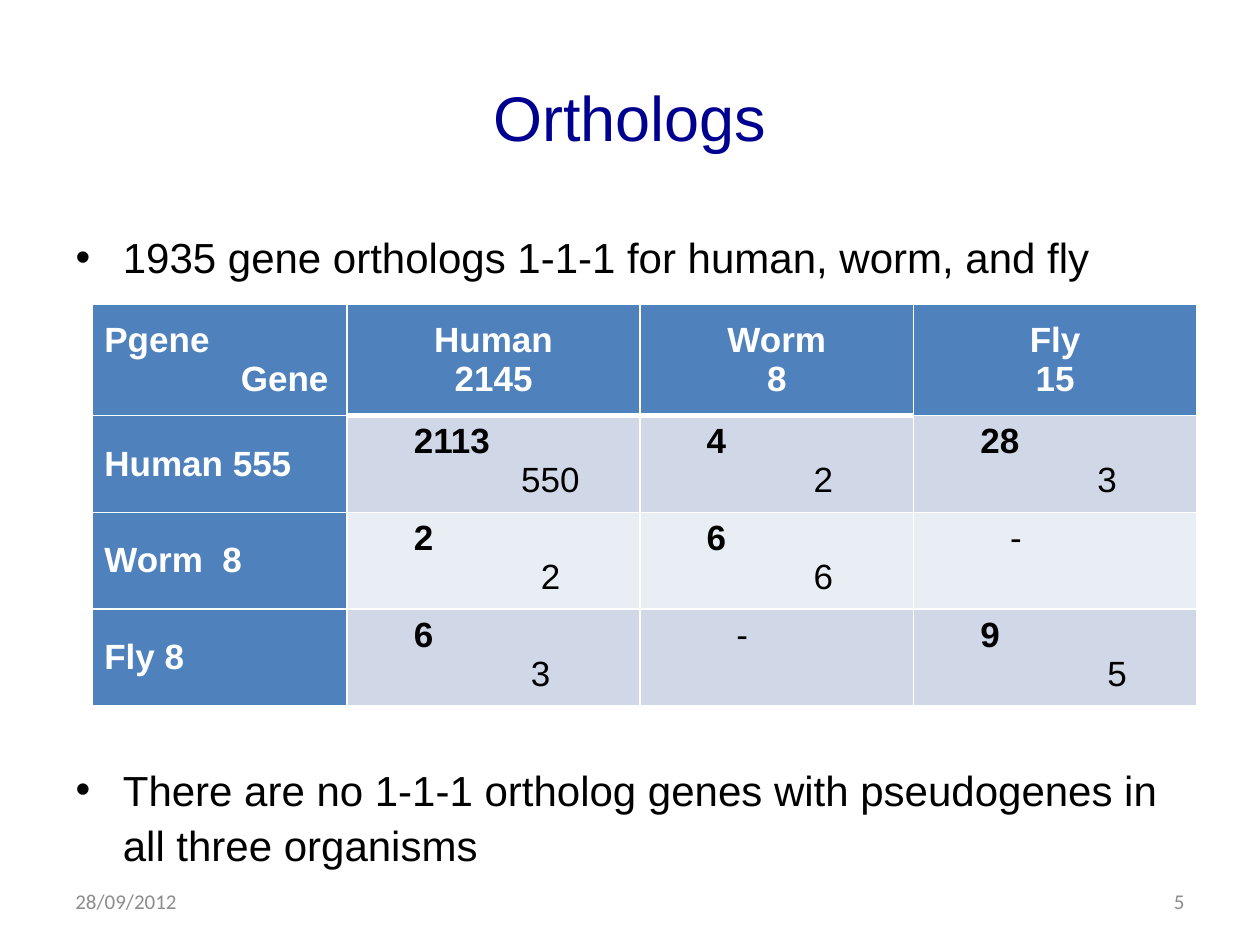
import dataclasses

import pptx
import pptx.dml.color
import pptx.enum.text
import pptx.oxml.xmlchemy
import pptx.util
import lxml.etree

Cm = pptx.util.Cm
Pt = pptx.util.Pt
ALIGN = pptx.enum.text.PP_ALIGN
ANCHOR = pptx.enum.text.MSO_ANCHOR
DRAWING = "{http://schemas.openxmlformats.org/drawingml/2006/main}"


@dataclasses.dataclass(frozen=True)
class Theme:
    font: str = "Arial"
    footer_font: str = "Calibri"
    title: str = "000090"
    ink: str = "000000"
    white: str = "FFFFFF"
    grey: str = "8C8C8C"
    header: str = "4F81BD"
    bands: tuple = ("D0D8E8", "E9EDF4")
    title_size: int = 36
    body_size: int = 24
    table_size: int = 20
    footer_size: int = 12


THEME = Theme()

COLUMN_WIDTHS = (5.15, 5.9, 5.52, 5.7)
HEADER_HEIGHT, ROW_HEIGHT = 2.25, 1.83
COUNT_INDENT, DASH_INDENT, GENE_INDENT = 1.09, 1.69, 2.75
SPECIES = (("Human", "2145"), ("Worm", "8"), ("Fly", "15"))

# Each count: pseudogenes, genes, indent of the gene figure in cm; None for no orthologs
ORTHOLOGS = (
    ("Human 555", (("2113", "550", 3.25), ("4", "2", 3.25), ("28", "3", 3.45))),
    ("Worm  8", (("2", "2", 3.65), ("6", "6", 3.25), None)),
    ("Fly 8", (("6", "3", 3.45), None, ("9", "5", 3.65))),
)


def rgb(color):
    return pptx.dml.color.RGBColor.from_string(color)


def place(item, box):
    item.left, item.top, item.width, item.height = (Cm(length) for length in box)


def add_run(paragraph, text, size, color, bold=False, font=THEME.font):
    run = paragraph.add_run()
    run.text = text
    run.font.name = font
    run.font.size = Pt(size)
    run.font.bold = bold
    run.font.color.rgb = rgb(color)


def next_paragraph(frame, first):
    return frame.paragraphs[0] if first else frame.add_paragraph()


def write_title(slide, box, text):
    title = slide.shapes.title
    place(title, box)
    frame = title.text_frame
    frame.vertical_anchor = ANCHOR.MIDDLE
    frame.paragraphs[0].alignment = ALIGN.CENTER
    add_run(frame.paragraphs[0], text, THEME.title_size, THEME.title)


def write_findings(slide, box, findings):
    """Fill the body list; each finding is its text and the points above it."""
    body = slide.placeholders[1]
    place(body, box)
    frame = body.text_frame
    frame.auto_size = pptx.enum.text.MSO_AUTO_SIZE.NONE
    for index, (text, gap) in enumerate(findings):
        paragraph = next_paragraph(frame, index == 0)
        paragraph.space_before = Pt(gap)
        paragraph.line_spacing = 1.09
        add_run(paragraph, text, THEME.body_size, THEME.ink)


def write_footer(slide, box, text, alignment):
    footer = slide.shapes.add_textbox(*(Cm(length) for length in box))
    frame = footer.text_frame
    frame.word_wrap = True
    frame.vertical_anchor = ANCHOR.MIDDLE
    frame.paragraphs[0].alignment = alignment
    add_run(frame.paragraphs[0], text, THEME.footer_size, THEME.grey,
            font=THEME.footer_font)


def style_cell(cell, fill, top=1, bottom=1):
    """Draw white borders, widths in points, then fill the cell."""
    properties = cell._tc.get_or_add_tcPr()
    for side, width in (("L", 1), ("R", 1), ("T", top), ("B", bottom)):
        line = lxml.etree.SubElement(properties, f"{DRAWING}ln{side}", w=str(Pt(width)))
        solid = lxml.etree.SubElement(line, f"{DRAWING}solidFill")
        lxml.etree.SubElement(solid, f"{DRAWING}srgbClr", val=THEME.white)
    cell.fill.solid()
    cell.fill.fore_color.rgb = rgb(fill)


def write_cell(cell, lines, color, alignment=ALIGN.LEFT, anchor=ANCHOR.MIDDLE):
    """Write lines of text, bold flag and left indent in cm."""
    cell.vertical_anchor = anchor
    for index, (text, bold, indent) in enumerate(lines):
        paragraph = next_paragraph(cell.text_frame, index == 0)
        paragraph.alignment = alignment
        if indent:
            paragraph._p.get_or_add_pPr().set("marL", str(Cm(indent)))
        add_run(paragraph, text, THEME.table_size, color, bold)


def count_lines(count):
    if count is None:
        return [("-", False, DASH_INDENT)]
    pseudogenes, genes, gene_indent = count
    return [(pseudogenes, True, COUNT_INDENT), (genes, False, gene_indent)]


def add_ortholog_table(slide, left, top):
    height = HEADER_HEIGHT + ROW_HEIGHT * len(ORTHOLOGS)
    table = slide.shapes.add_table(
        len(ORTHOLOGS) + 1, len(COLUMN_WIDTHS),
        Cm(left), Cm(top), Cm(sum(COLUMN_WIDTHS)), Cm(height)).table
    for column, width in zip(table.columns, COLUMN_WIDTHS):
        column.width = Cm(width)
    for index, row in enumerate(table.rows):
        row.height = Cm(ROW_HEIGHT if index else HEADER_HEIGHT)

    # The thick rule runs under the Human and Worm headings only
    rule_widths = (1, 3, 3, 1)
    for column, rule in enumerate(rule_widths):
        style_cell(table.cell(0, column), THEME.header, bottom=rule)
    write_cell(table.cell(0, 0), [("Pgene", True, 0), ("Gene", True, GENE_INDENT)],
               THEME.white)
    for column, heading in enumerate(SPECIES, 1):
        write_cell(table.cell(0, column), [(line, True, 0) for line in heading],
                   THEME.white, ALIGN.CENTER)

    for row, (label, counts) in enumerate(ORTHOLOGS, 1):
        style_cell(table.cell(row, 0), THEME.header)
        write_cell(table.cell(row, 0), [(label, True, 0)], THEME.white)
        band = THEME.bands[(row - 1) % 2]
        for column, count in enumerate(counts, 1):
            cell = table.cell(row, column)
            style_cell(cell, band, top=rule_widths[column] if row == 1 else 1)
            write_cell(cell, count_lines(count), THEME.ink, anchor=ANCHOR.TOP)


def main():
    deck = pptx.Presentation()
    deck.slide_width, deck.slide_height = Cm(25.4), Cm(19.05)
    slide = deck.slides.add_slide(deck.slide_layouts[1])
    margin, content_width, footer_width = 1.27, 22.86, 5.92
    write_title(slide, (margin, 0.76, content_width, 3.18), "Orthologs")
    write_findings(slide, (margin, 4.45, content_width, 12.57), (
        ("1935 gene orthologs 1-1-1 for human, worm, and fly", 0),
        ("There are no 1-1-1 ortholog genes with pseudogenes in all three organisms", 273),
    ))
    write_footer(slide, (margin, 17.65, footer_width, 1.02), "28/09/2012", ALIGN.LEFT)
    write_footer(slide, (margin + content_width - footer_width, 17.65, footer_width, 1.02),
                 "5", ALIGN.RIGHT)
    add_ortholog_table(slide, 1.85, 6.13)
    deck.save("out.pptx")


if __name__ == "__main__":
    main()
